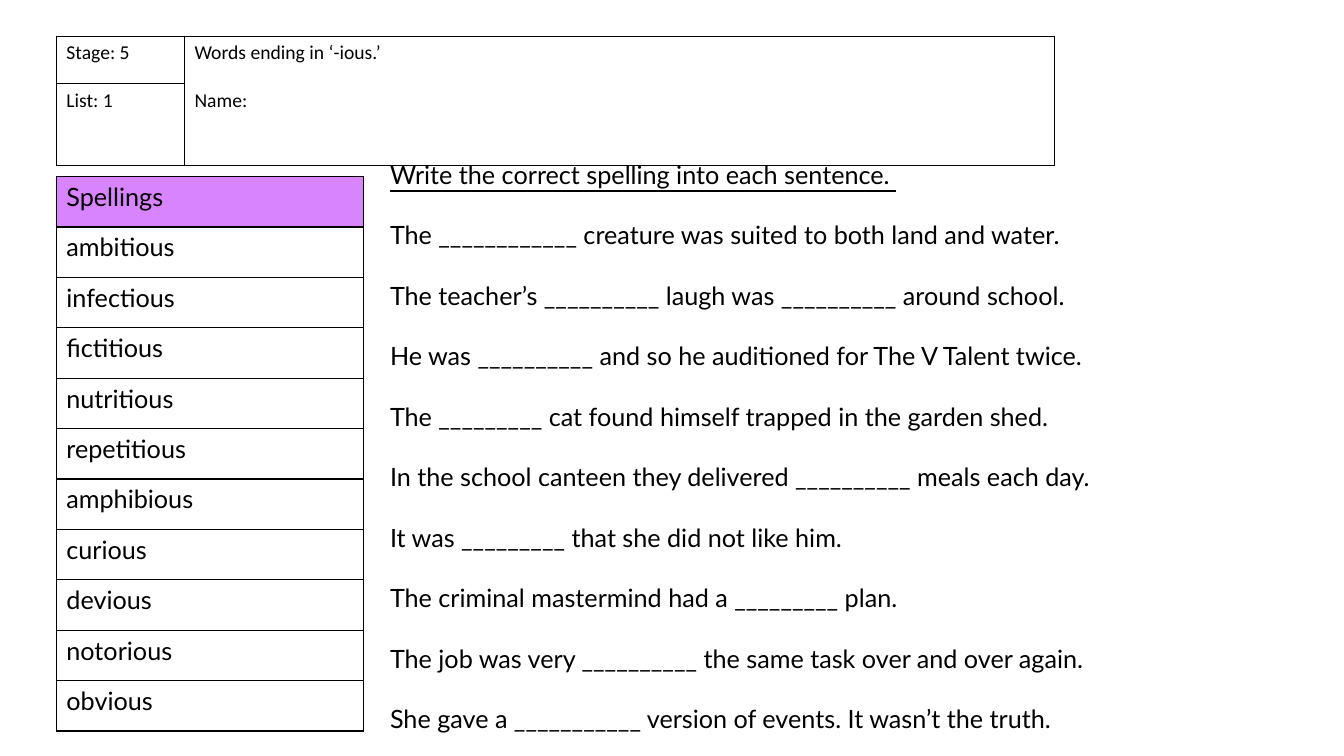
from lxml import etree
from pptx import Presentation
from pptx.dml.color import RGBColor
from pptx.enum.text import MSO_ANCHOR
from pptx.oxml.ns import qn
from pptx.util import Cm, Pt

BLACK = RGBColor(0x00, 0x00, 0x00)
PURPLE = RGBColor(0xD8, 0x83, 0xFF)
TOP = MSO_ANCHOR.TOP

SPELLINGS = [
    "ambitious", "infectious", "fictitious", "nutritious", "repetitious",
    "amphibious", "curious", "devious", "notorious", "obvious",
]
INSTRUCTION = "Write the correct spelling into each sentence. "
SENTENCES = [
    "The ____________ creature was suited to both land and water.",
    "The teacher’s __________ laugh was __________ around school.",
    "He was __________ and so he auditioned for The V Talent twice.",
    "The _________ cat found himself trapped in the garden shed.",
    "In the school canteen they delivered __________ meals each day.",
    "It was _________ that she did not like him.",
    "The criminal mastermind had a _________ plan.",
    "The job was very __________ the same task over and over again.",
    "She gave a ___________ version of events. It wasn’t the truth.",
]


def write_lines(text_frame, lines, font_name, size, gap=0):
    """Fill a text frame with one paragraph per line, parted by gap points."""
    for index, line in enumerate(lines):
        paragraph = text_frame.paragraphs[0] if index == 0 else text_frame.add_paragraph()
        paragraph.text = line
        paragraph.font.name = font_name
        paragraph.font.size = Pt(size)
        paragraph.font.color.rgb = BLACK
        if index:
            paragraph.space_before = Pt(gap)


def add_borders(cell):
    """Draw a one-point black line on every side of a cell."""
    properties = cell._tc.get_or_add_tcPr()
    for side in ("a:lnL", "a:lnR", "a:lnT", "a:lnB"):
        line = etree.SubElement(properties, qn(side), w=str(Pt(1)))
        fill = etree.SubElement(line, qn("a:solidFill"))
        etree.SubElement(fill, qn("a:srgbClr"), val=str(BLACK))


def add_plain_table(slide, left, top, widths, heights):
    """Add a bordered table without fills and return it."""
    shape = slide.shapes.add_table(
        len(heights), len(widths), left, top, sum(widths), sum(heights))
    table = shape.table
    table.first_row = False
    table.horz_banding = False
    for column, width in zip(table.columns, widths):
        column.width = width
    for row, height in zip(table.rows, heights):
        row.height = height
    for cell in table.iter_cells():
        add_borders(cell)
        cell.fill.background()
        cell.vertical_anchor = TOP
    return table


def add_header(slide, left, top, width):
    """Place the stage, list, topic and name panel."""
    label_width = Cm(3.23)
    table = add_plain_table(
        slide, left, top, [label_width, width - label_width], [Cm(1.19), Cm(2.07)])
    table.cell(0, 1).merge(table.cell(1, 1))
    write_lines(table.cell(0, 0).text_frame, ["Stage: 5"], "Calibri", 14)
    write_lines(table.cell(1, 0).text_frame, ["List: 1"], "Calibri", 14)
    write_lines(table.cell(0, 1).text_frame,
                ["Words ending in ‘-ious.’", "Name:"], "Calibri", 14, 17)


def add_spellings(slide, left, top, width, row_height):
    """Place the spelling list under its coloured heading."""
    words = ["Spellings", *SPELLINGS]
    table = add_plain_table(slide, left, top, [width], [row_height] * len(words))
    for index, word in enumerate(words):
        write_lines(table.cell(index, 0).text_frame, [word], "Lato", 18)
    heading_fill = table.cell(0, 0).fill
    heading_fill.solid()
    heading_fill.fore_color.rgb = PURPLE


def add_sentences(slide, left, top, width, height):
    """Place the underlined instruction and the sentences to complete."""
    text_frame = slide.shapes.add_textbox(left, top, width, height).text_frame
    text_frame.word_wrap = True
    write_lines(text_frame, [INSTRUCTION, *SENTENCES], "Lato", 18, 21.6)
    text_frame.paragraphs[0].font.underline = True


def main():
    """Build and save the spelling worksheet."""
    presentation = Presentation()
    presentation.slide_width = Cm(33.87)
    presentation.slide_height = Cm(19.05)
    slide = presentation.slides.add_slide(presentation.slide_layouts[6])
    margin = Cm(1.42)
    add_spellings(slide, margin, Cm(4.45), Cm(7.75), Cm(1.27))
    add_header(slide, margin, Cm(0.91), Cm(25.15))
    add_sentences(slide, Cm(9.58), Cm(3.89), Cm(24.28), Cm(17.2))
    presentation.save("out.pptx")


if __name__ == "__main__":
    main()
